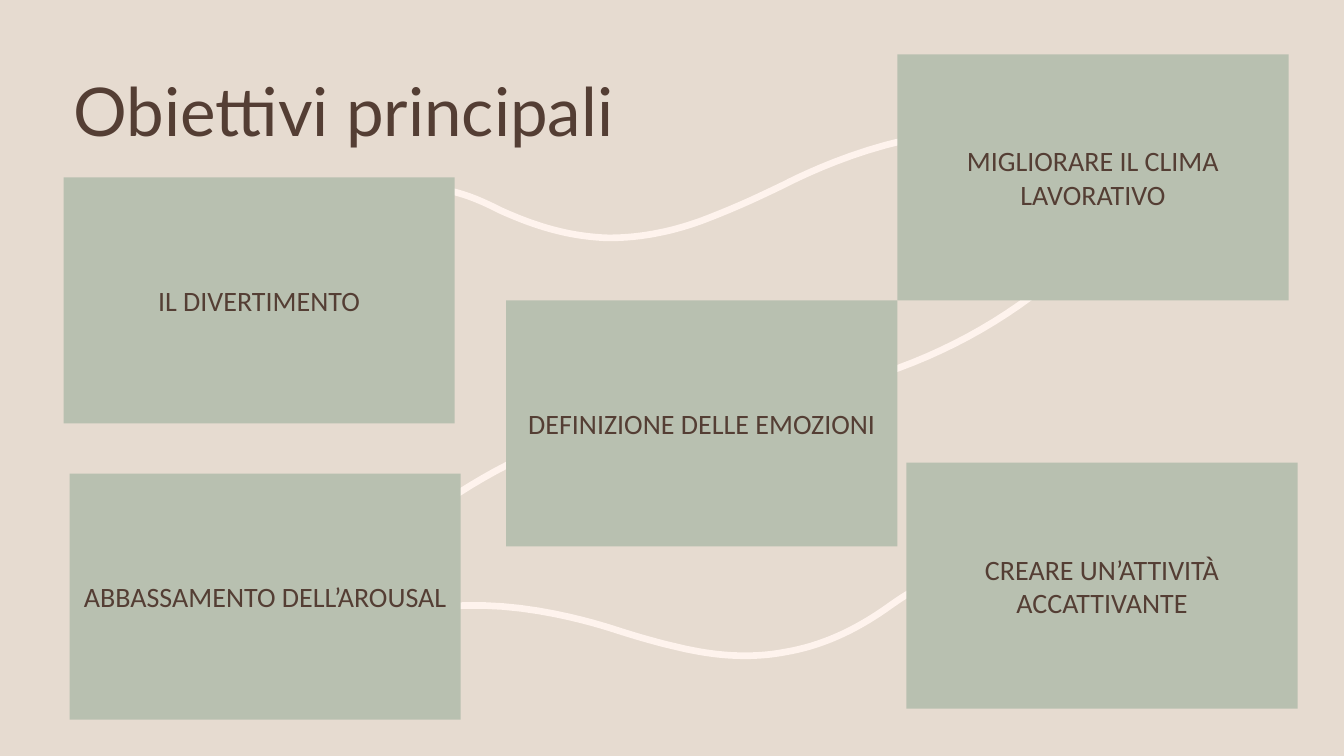
from pptx import Presentation
from pptx.dml.color import RGBColor as Rgb
from pptx.enum.shapes import MSO_SHAPE as Shape
from pptx.enum.text import MSO_ANCHOR as Anchor, MSO_AUTO_SIZE as AutoSize, PP_ALIGN as Align
from pptx.util import Inches, Pt

COLORS = {"background": "E6DBD0", "box": "B8C0B0", "text": "543E34", "wave": "FEF3ED"}
BOX_SIZE = (3.88, 2.44)
GOALS = [
    ("IL DIVERTIMENTO", 0.63, 1.76),
    ("MIGLIORARE IL CLIMA LAVORATIVO", 8.9, 0.54),
    ("DEFINIZIONE DELLE EMOZIONI", 5.02, 2.98),
    ("ABBASSAMENTO DELL’AROUSAL", 0.69, 4.7),
    ("CREARE UN’ATTIVITÀ ACCATTIVANTE", 8.99, 4.59),
]
WAVES = [
    [(8.33, 3.83), (9.13, 3.63), (9.85, 3.27), (10.47, 2.75)],
    [(5.84, 4.28), (5.09, 4.52), (4.45, 4.9), (3.89, 5.39)],
    [(3.07, 2.23), (3.5, 1.87), (3.98, 1.77), (4.49, 1.9),
     (4.66, 1.94), (4.81, 2.01), (4.97, 2.09),
     (5.3, 2.24), (5.65, 2.35), (6.04, 2.36),
     (6.37, 2.36), (6.7, 2.29), (7.01, 2.17),
     (7.37, 2.03), (7.57, 1.93), (7.78, 1.83),
     (8.01, 1.71), (9.4, 1.03), (10.27, 1.46)],
    [(9.2, 5.79), (9.04, 5.86), (8.91, 5.95), (8.77, 6.05),
     (8.48, 6.25), (8.15, 6.41), (7.78, 6.47),
     (7.46, 6.53), (7.14, 6.51), (6.81, 6.44),
     (6.45, 6.36), (6.24, 6.29), (6.02, 6.22),
     (5.78, 6.15), (4.34, 5.7), (3.47, 6.36)],
]


def curve_points(anchors, steps=16):
    for index in range(0, len(anchors) - 1, 3):
        for step in range(1, steps + 1):
            t = step / steps
            u = 1 - t
            yield tuple(
                Inches(u**3 * a + 3 * u**2 * t * b + 3 * u * t**2 * c + t**3 * d)
                for a, b, c, d in zip(*anchors[index:index + 4])
            )


class GoalSlide:
    def __init__(self, deck):
        self.page = deck.slides.add_slide(deck.slide_layouts[5])
        self.paint(self.page.background.fill, "background")

    def paint(self, target, color):
        target.solid()
        target.fore_color.rgb = Rgb.from_string(COLORS[color])

    def label(self, box, text, font, size, align):
        frame = box.text_frame
        frame_format = {"word_wrap": True, "auto_size": AutoSize.NONE,
                        "vertical_anchor": Anchor.MIDDLE}
        for name, value in frame_format.items():
            setattr(frame, name, value)
        para = frame.paragraphs[0]
        para.alignment = align
        span = para.add_run()
        span.text = text
        for name, value in {"name": font, "size": Pt(size), "bold": False}.items():
            setattr(span.font, name, value)
        span.font.color.rgb = Rgb.from_string(COLORS["text"])
        return para

    def title(self, text, left, top, width, height):
        box = self.page.shapes.title
        place = {"left": left, "top": top, "width": width, "height": height}
        for name, value in place.items():
            setattr(box, name, Inches(value))
        self.label(box, text, "Lato", 48, Align.LEFT).line_spacing = 0.9

    def wave(self, anchors):
        builder = self.page.shapes.build_freeform(*map(Inches, anchors[0]))
        builder.add_line_segments(curve_points(anchors), close=False)
        curve = builder.convert_to_shape()
        curve.shadow.inherit = False
        curve.fill.background()
        curve.line.width = Pt(4.75)
        self.paint(curve.line.fill, "wave")

    def goal(self, text, left, top):
        box = self.page.shapes.add_shape(
            Shape.RECTANGLE, *map(Inches, (left, top, *BOX_SIZE)))
        box.shadow.inherit = False
        self.paint(box.fill, "box")
        box.line.fill.background()
        self.label(box, text, "Calibri", 20, Align.CENTER)


def main():
    deck = Presentation()
    deck.slide_width, deck.slide_height = Inches(13.33), Inches(7.5)
    slide = GoalSlide(deck)
    slide.title("Obiettivi principali", 0.63, 0.77, 10, 0.74)
    for anchors in WAVES:
        slide.wave(anchors)
    for goal in GOALS:
        slide.goal(*goal)
    deck.save("out.pptx")


if __name__ == "__main__":
    main()
